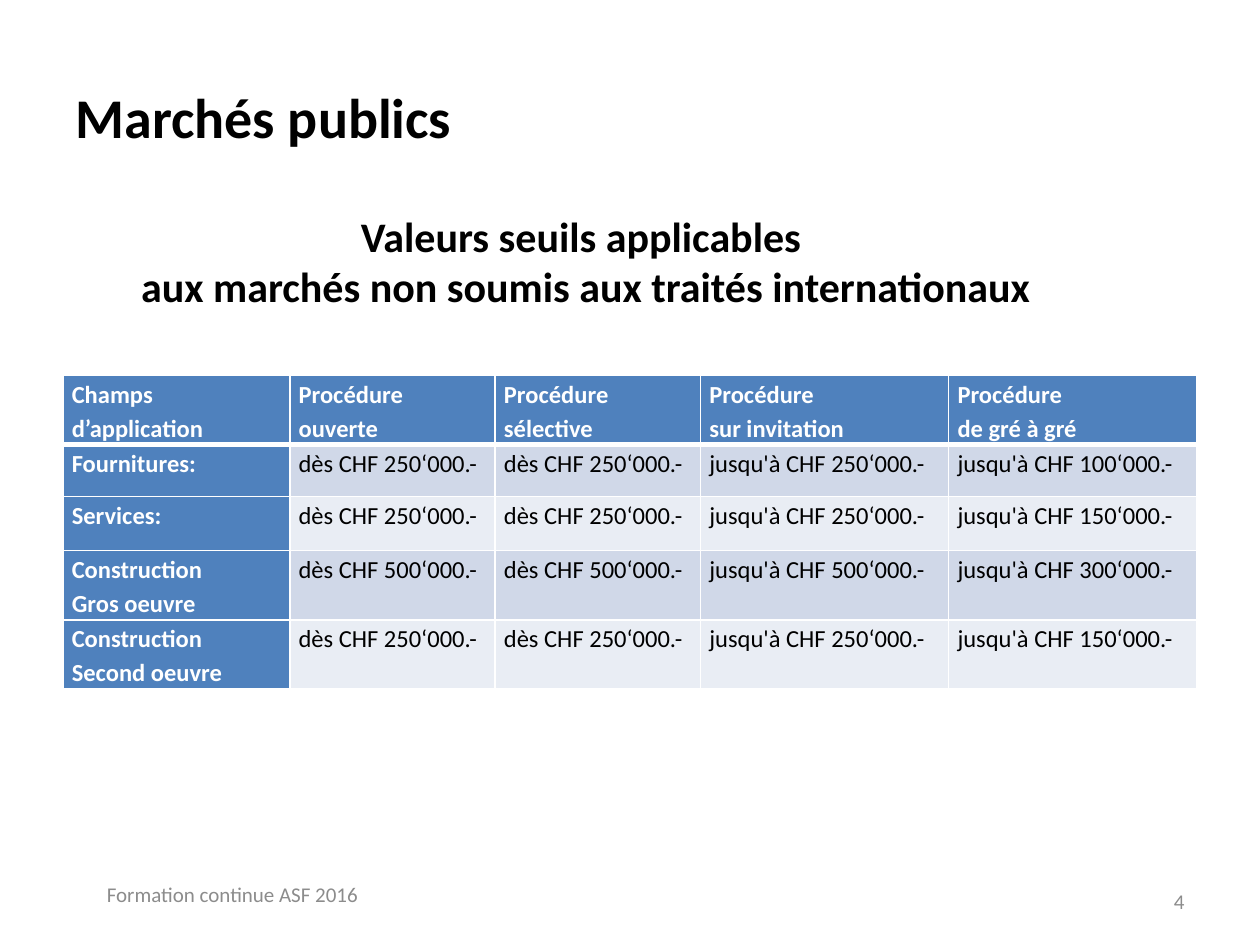
import pptx
import pptx.util
import pptx.dml.color
import pptx.enum.text
import pptx.oxml.ns
from lxml import etree

Inches, Pt, qn = pptx.util.Inches, pptx.util.Pt, pptx.oxml.ns.qn
ALIGN, ANCHOR = pptx.enum.text.PP_ALIGN, pptx.enum.text.MSO_ANCHOR

# Content
TITLE = "Marchés publics"
SUBTITLE = "Valeurs seuils applicables \naux marchés non soumis aux traités internationaux"
FOOTER, PAGE = "Formation continue ASF 2016", "4"
HEADER = ["Champs d’application", "Procédure ouverte", "Procédure \nsélective",
          "Procédure \nsur invitation", "Procédure \nde gré à gré"]
# Field, open and selective from, invitation up to, direct award up to
THRESHOLDS = [
    ("Fournitures:", 250, 250, 250, 100),
    ("Services:", 250, 250, 250, 150),
    ("Construction\nGros oeuvre", 500, 500, 500, 300),
    ("Construction\nSecond oeuvre", 250, 250, 250, 150),
]
PREFIXES = ["dès", "dès", "jusqu'à", "jusqu'à"]
COL_WIDTHS = [1.8, 1.63, 1.63, 1.97, 1.97]
ROW_HEIGHTS = [0.55, 0.41, 0.43, 0.55, 0.55]
BLUE, BANDS = "4F81BD", ["D0D8E8", "E9EDF4"]
WHITE, BLACK, GREY = "FFFFFF", "000000", "8C8C8C"


def rgb(value):
    return pptx.dml.color.RGBColor.from_string(value)


def write(tf, text, size=14, color=BLACK, bold=False, align=ALIGN.LEFT,
          anchor=ANCHOR.TOP, spacing=None):
    tf.word_wrap = True
    tf.vertical_anchor = anchor
    p = tf.paragraphs[0]
    p.text = text
    p.alignment = align
    p.line_spacing = spacing
    for r in p.runs:
        r.font.name, r.font.size, r.font.bold = "Calibri", Pt(size), bold
        r.font.color.rgb = rgb(color)
    # Line breaks take the text size too
    for br in p._p.findall(qn("a:br")):
        etree.SubElement(br, qn("a:rPr"), sz=str(size * 100))


def text_box(s, at, text, **fmt):
    tf = s.shapes.add_textbox(*map(Inches, at)).text_frame
    write(tf, text, **fmt)


def set_borders(cell, bottom):
    tcPr = cell._tc.get_or_add_tcPr()
    for side, width in (("L", 1), ("R", 1), ("T", 1), ("B", bottom)):
        ln = etree.SubElement(tcPr, qn("a:ln" + side), w=str(Pt(width)))
        fill = etree.SubElement(ln, qn("a:solidFill"))
        etree.SubElement(fill, qn("a:srgbClr"), val=WHITE)


def add_thresholds(s):
    rows = [HEADER]
    for field, *values in THRESHOLDS:
        rows.append([field] + [f"{prefix} CHF {v}‘000.-" for prefix, v in zip(PREFIXES, values)])
    table = s.shapes.add_table(len(rows), len(HEADER), Inches(0.5), Inches(2.98),
                               Inches(sum(COL_WIDTHS)), Inches(sum(ROW_HEIGHTS))).table
    for col, width in zip(table.columns, COL_WIDTHS):
        col.width = Inches(width)
    for i, row in enumerate(rows):
        table.rows[i].height = Inches(ROW_HEIGHTS[i])
        for j, text in enumerate(row):
            cell = table.cell(i, j)
            heading = i == 0 or j == 0
            cell.margin_left = cell.margin_right = Inches(0.07)
            cell.margin_top = cell.margin_bottom = 0
            set_borders(cell, 3 if i == 0 else 1)
            cell.fill.solid()
            cell.fill.fore_color.rgb = rgb(BLUE if heading else BANDS[(i - 1) % 2])
            write(cell.text_frame, text, color=WHITE if heading else BLACK,
                  bold=heading, spacing=1.15)


def main():
    prs = pptx.Presentation()
    prs.slide_width, prs.slide_height = Inches(10), Inches(7.5)
    s = prs.slides.add_slide(prs.slide_layouts[5])

    # Title and subtitle
    sp = s.shapes.title
    sp.left, sp.top, sp.width, sp.height = map(Inches, (0.5, 0.3, 9, 1.25))
    write(sp.text_frame, TITLE, size=32, bold=True, anchor=ANCHOR.MIDDLE)
    text_box(s, (0.83, 1.62, 7.64, 0.91), SUBTITLE, size=24, bold=True, align=ALIGN.CENTER)

    # Table of thresholds
    add_thresholds(s)

    # Footer and page number
    small = dict(size=12, color=GREY, anchor=ANCHOR.MIDDLE)
    text_box(s, (0.75, 6.9, 2.33, 0.4), FOOTER, **small)
    text_box(s, (7.17, 6.95, 2.33, 0.4), PAGE, align=ALIGN.RIGHT, **small)
    prs.save("out.pptx")


if __name__ == "__main__":
    main()
